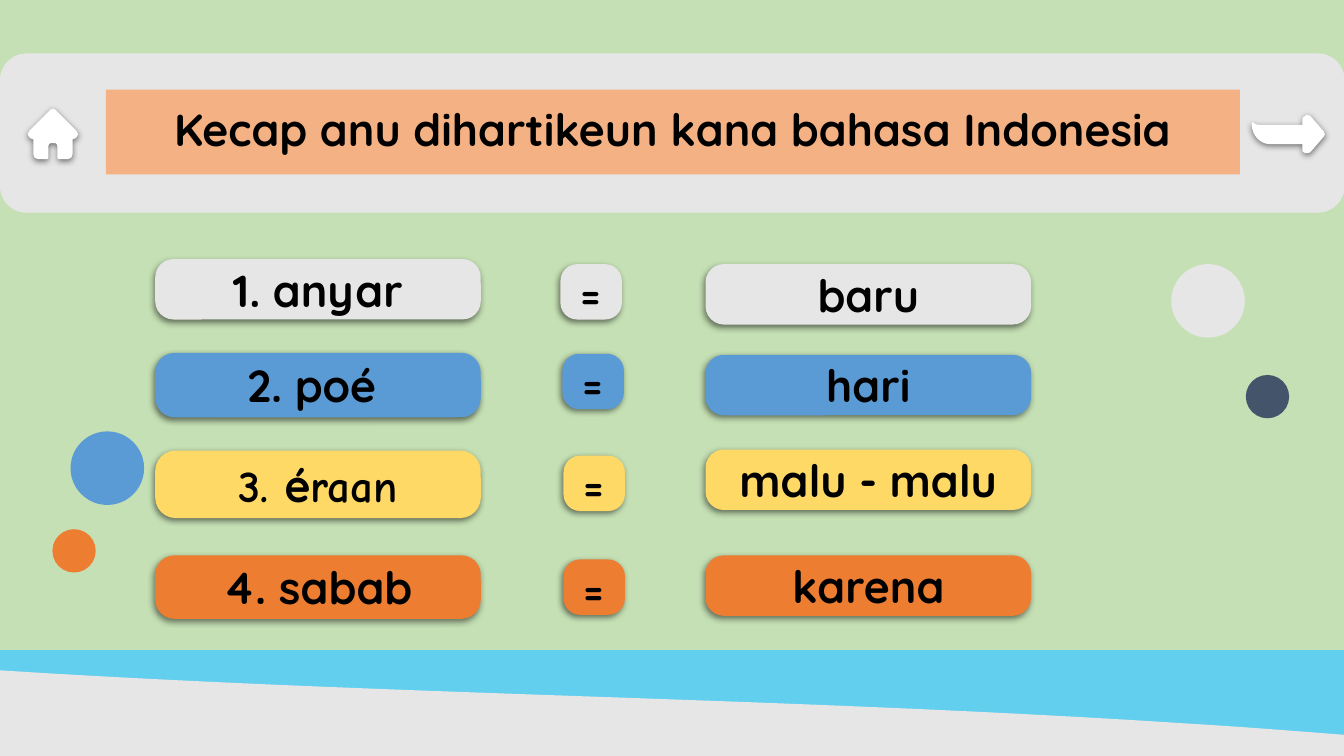
from lxml.etree import SubElement
from pptx import Presentation
from pptx.dml.color import RGBColor
from pptx.enum.shapes import MSO_SHAPE
from pptx.enum.text import MSO_ANCHOR, MSO_AUTO_SIZE, PP_ALIGN
from pptx.oxml.ns import qn
from pptx.util import Inches, Pt

GREEN = RGBColor(0xC5, 0xE0, 0xB4)
GREY = RGBColor(0xE7, 0xE6, 0xE6)
SKY = RGBColor(0x62, 0xCF, 0xEE)
WHITE = RGBColor(0xFF, 0xFF, 0xFF)
BLACK = RGBColor(0, 0, 0)
PEACH = RGBColor(0xF4, 0xB1, 0x83)
BLUE = RGBColor(0x5B, 0x9B, 0xD5)
ORANGE = RGBColor(0xED, 0x7D, 0x31)
YELLOW = RGBColor(0xFF, 0xD9, 0x66)
SLATE = RGBColor(0x44, 0x54, 0x6A)
H = 7.5
W = H * 16 / 9
MAIN, ALT = "Quicksand", "Comic Neue"

# Content
TITLE = "Kecap anu dihartikeun kana bahasa Indonesia"
COLORS = [GREY, BLUE, YELLOW, ORANGE]
CARD_W, CARD_H = 3.23, 0.6
# Each column holds one (runs, box) per row
WORDS = [
    ([("1. anyar", MAIN)], (1.54, 2.57, CARD_W, 0.6)),
    ([("2. poé ", MAIN)], (1.54, 3.5, CARD_W, 0.64)),
    ([("3. ", ALT), ("é", MAIN), ("raan", ALT)], (1.54, 4.47, CARD_W, 0.67)),
    ([("4. sabab", MAIN)], (1.54, 5.51, CARD_W, 0.63)),
]
MEANINGS = [([(text, MAIN)], (7, y, CARD_W, CARD_H)) for text, y in
            [("baru", 2.62), ("hari", 3.52), ("malu - malu", 4.46), ("karena", 5.51)]]
EQUALS = [([("=", ALT)], (x, y, 0.61, 0.55)) for x, y in
          [(5.56, 2.62), (5.58, 3.51), (5.59, 4.52), (5.59, 5.55)]]
BIG, SMALL = 0.73, 0.43
DOT_PAIRS = [[(0.7, 4.28, BIG, BLUE), (0.52, 5.25, SMALL, ORANGE)],
             [(11.62, 2.62, BIG, GREY), (12.36, 3.72, SMALL, SLATE)]]

# Outlines: two numbers are a straight step, six a Bezier curve
SKY_PATH = [(0, 6.45), (0, 6.66), (3.92, 6.92, 7.85, 6.93, 11.81, 7.19),
            (12.32, 7.23, 12.82, 7.27, W, 7.31), (W, 6.45)]
LAND_PATH = [(0, 6.65), (0, H), (W, H), (W, 7.29),
             (12.82, 7.25, 12.32, 7.21, 11.81, 7.18), (7.85, 6.92, 3.92, 6.9, 0, 6.65)]
HALF_HOME = [(0.52, 1.08), (0.51, 1.08, 0.5, 1.09, 0.49, 1.1), (0.29, 1.3),
             (0.27, 1.32, 0.27, 1.35, 0.29, 1.36), (0.3, 1.37, 0.31, 1.38, 0.32, 1.38),
             (0.33, 1.38), (0.33, 1.53), (0.33, 1.56, 0.35, 1.58, 0.38, 1.58),
             (0.46, 1.58), (0.47, 1.58, 0.48, 1.57, 0.48, 1.57), (0.48, 1.45),
             (0.48, 1.44, 0.49, 1.42, 0.5, 1.42)]
HOME_AXIS = 0.525
ARROW = [(12.97, 1.14), (12.96, 1.14, 12.95, 1.14, 12.95, 1.15),
         (12.93, 1.15, 12.92, 1.17, 12.92, 1.19), (12.92, 1.24), (12.5, 1.24),
         (12.47, 1.24, 12.44, 1.23, 12.42, 1.21), (12.42, 1.24),
         (12.42, 1.34, 12.5, 1.43, 12.6, 1.43), (12.92, 1.43), (12.92, 1.48),
         (12.92, 1.5, 12.92, 1.51, 12.95, 1.52),
         (12.95, 1.52, 12.95, 1.52, 12.96, 1.52),
         (12.97, 1.52, 12.99, 1.52, 13, 1.51), (13.13, 1.36),
         (13.15, 1.35, 13.15, 1.32, 13.13, 1.3), (13, 1.15),
         (12.99, 1.14, 12.98, 1.14, 12.97, 1.14)]


def points(outline):
    return [step[i:i + 2] for step in outline for i in range(0, len(step), 2)]


def mirrored(half, axis):
    """Return the half outline followed by its reflection."""
    back = iter([(2 * axis - x, y) for x, y in reversed(points(half))])
    steps = [next(back)]
    for step in reversed(half[1:]):
        steps.append(sum((next(back) for _ in range(len(step) // 2)), ()))
    return half + steps


def paint(sp, color, shadow=None):
    sp.fill.solid()
    sp.fill.fore_color.rgb = color
    sp.line.fill.background()
    sp.shadow.inherit = False
    if shadow:
        dist, angle = shadow
        effects = sp.element.spPr.find(qn("a:effectLst"))
        outer = SubElement(effects, qn("a:outerShdw"), blurRad=str(Pt(4.5)),
                           dist=str(Pt(dist)), dir=str(angle * 60000),
                           algn="bl", rotWithShape="0")
        clr = SubElement(outer, qn("a:srgbClr"), val="000000")
        SubElement(clr, qn("a:alpha"), val="50000")


def add_outline(shapes, outline, color, shadow=None):
    pts = [(Inches(x), Inches(y)) for x, y in points(outline)]
    fb = shapes.build_freeform(*pts[0])
    fb.add_line_segments(pts[1:], close=True)
    sp = fb.convert_to_shape()
    # Fold the three straight steps of each curve into one Bezier segment
    lines = iter(list(sp.element.iter(qn("a:lnTo"))))
    for step in outline[1:]:
        segments = [next(lines) for _ in range(len(step) // 2)]
        if len(segments) == 3:
            curve = segments[0].makeelement(qn("a:cubicBezTo"))
            segments[0].addprevious(curve)
            for segment in segments:
                curve.append(segment[0])
                segment.getparent().remove(segment)
    paint(sp, color, shadow)


def add_preset(shapes, kind, box, color, shadow=None):
    sp = shapes.add_shape(kind, *map(Inches, box))
    paint(sp, color, shadow)
    return sp


def write(sp, runs):
    tf = sp.text_frame
    tf.word_wrap = True
    tf.auto_size = MSO_AUTO_SIZE.NONE
    tf.vertical_anchor = MSO_ANCHOR.MIDDLE
    tf.margin_left = tf.margin_right = tf.margin_top = tf.margin_bottom = Inches(0.13)
    p = tf.paragraphs[0]
    p.alignment = PP_ALIGN.CENTER
    for text, font in runs:
        r = p.add_run()
        r.text = text
        r.font.name, r.font.size, r.font.bold = font, Pt(32), True
        r.font.color.rgb = BLACK


def main():
    prs = Presentation()
    prs.slide_width, prs.slide_height = Inches(W), Inches(H)
    s = prs.slides.add_slide(prs.slide_layouts[5])
    s.background.fill.solid()
    s.background.fill.fore_color.rgb = GREEN

    # Header band and landscape
    band = add_preset(s.shapes, MSO_SHAPE.ROUNDED_RECTANGLE, (0, 0.53, 13.34, 1.58), GREY)
    band.adjustments[0] = 0.167
    landscape = s.shapes.add_group_shape()
    add_outline(landscape.shapes, SKY_PATH, SKY)
    add_outline(landscape.shapes, LAND_PATH, GREY)

    # Navigation icons
    add_outline(s.shapes, mirrored(HALF_HOME, HOME_AXIS), WHITE, (1.5, 90))
    add_outline(s.shapes, ARROW, WHITE, (1.5, 90))

    # Title, brought in front of the band
    title = s.shapes.title
    title.left, title.top, title.width, title.height = map(Inches, (1.05, 0.89, 11.25, 0.84))
    title.fill.solid()
    title.fill.fore_color.rgb = PEACH
    write(title, [(TITLE, MAIN)])
    title.text_frame.paragraphs[0].line_spacing = 0.9
    title.element.getparent().append(title.element)

    # Dots
    for pair in DOT_PAIRS:
        group = s.shapes.add_group_shape()
        for x, y, size, color in pair:
            add_preset(group.shapes, MSO_SHAPE.OVAL, (x, y, size, size), color)

    # Word = meaning cards
    for column in (WORDS, MEANINGS, EQUALS):
        for (runs, box), color in zip(column, COLORS):
            card = add_preset(s.shapes, MSO_SHAPE.ROUNDED_RECTANGLE, box, color, (2.2, 127))
            card.adjustments[0] = 0.302
            write(card, runs)

    prs.save("out.pptx")


if __name__ == "__main__":
    main()
